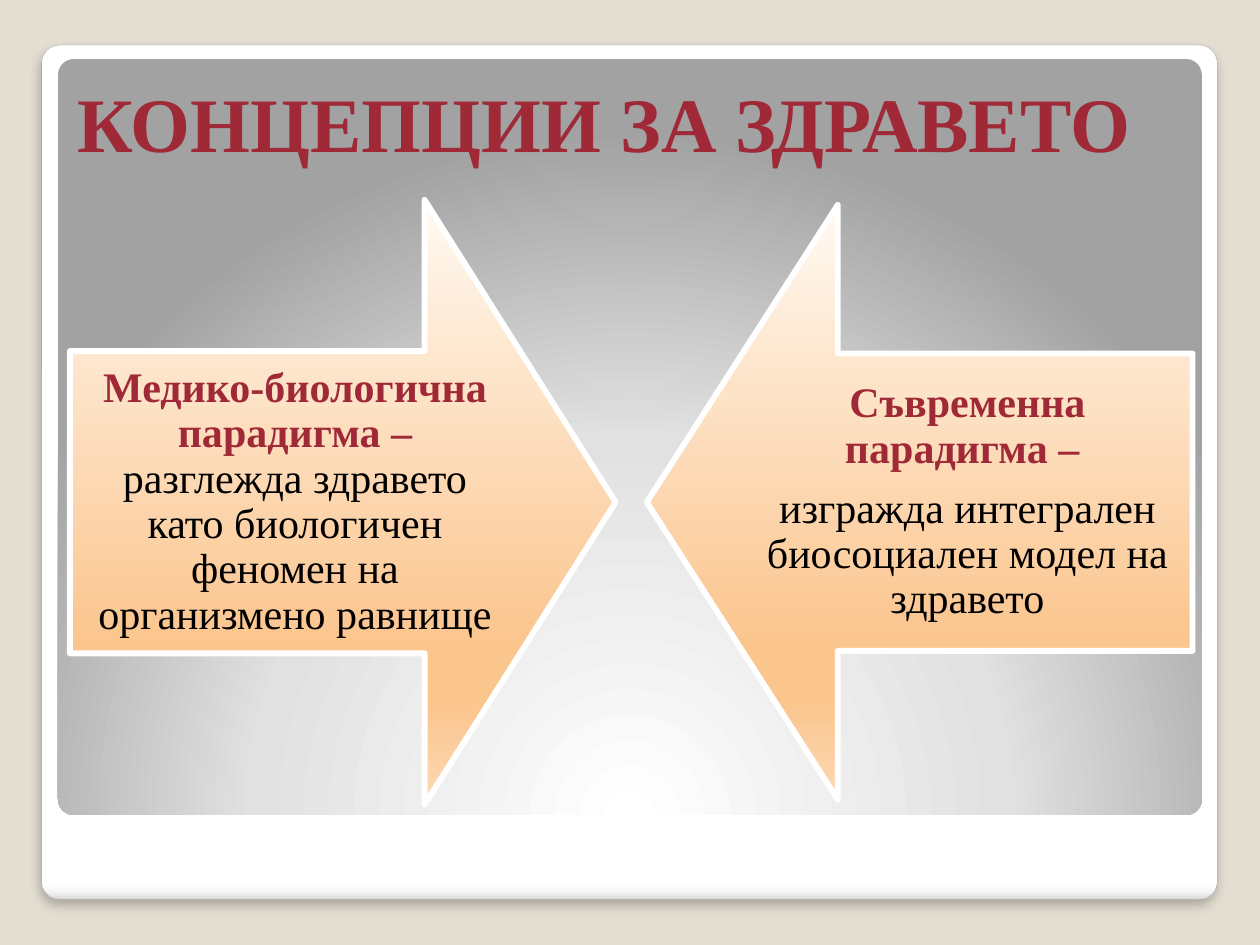
"""Build the slide that sets two concepts of health against each other."""
from lxml import etree
from pptx import Presentation
from pptx.dml.color import RGBColor
from pptx.enum.shapes import MSO_SHAPE as SHAPE
from pptx.enum.text import MSO_ANCHOR as ANCHOR, MSO_AUTO_SIZE as AUTO, PP_ALIGN as ALIGN
from pptx.oxml import parse_xml
from pptx.oxml.ns import nsdecls, qn
from pptx.util import Cm, Pt

COLORS = {"sand": "E3DED1", "white": "FFFFFF", "edge": "A4A4A4", "red": "9F2936", "black": "000000"}
CARD = [(0, "FFFFFF"), (98, "FFFFFF"), (99, "F7F7F7"), (100, "DADADA")]
PANEL = [(0, "FFFFFF"), (55, "E1E1E1"), (100, "A2A2A2")]
PEACH = [(0, "FFF9F2"), (74, "FBC58E"), (83, "FBC58E"), (100, "FCD9B4")]
LINEAR = '<a:lin ang="5400000" scaled="0"/>'
RADIAL = '<a:path path="circle"><a:fillToRect l="50000" t="175000" r="50000" b="-75000"/></a:path>'


def add_shape(kind, box, adjustments, stops, shade=LINEAR, line=None, width=0):
    s = slide.shapes.add_shape(kind, *map(Cm, box))
    for i, value in enumerate(adjustments):
        s.adjustments[i] = value
    gs = "".join(f'<a:gs pos="{pos * 1000}"><a:srgbClr val="{color}"/></a:gs>' for pos, color in stops)
    s._element.spPr.append(parse_xml(
        f'<a:gradFill {nsdecls("a")} rotWithShape="1"><a:gsLst>{gs}</a:gsLst>{shade}</a:gradFill>'))
    if line:
        s.line.color.rgb = RGBColor.from_string(COLORS[line])
        s.line.width = Pt(width)
    else:
        s.line.fill.background()
    s.shadow.inherit = False
    return s


def add_run(p, text, size=24, color="black", bold=False):
    r = p.add_run()
    r.text = text
    r.font.name = "Times New Roman"
    r.font.size = Pt(size)
    r.font.bold = bold
    r.font.color.rgb = RGBColor.from_string(COLORS[color])


prs = Presentation()
prs.slide_width, prs.slide_height = Cm(25.4), Cm(19.05)
slide = prs.slides.add_slide(prs.slide_layouts[5])
slide.background.fill.solid()
slide.background.fill.fore_color.rgb = RGBColor.from_string(COLORS["sand"])

card = add_shape(SHAPE.ROUNDED_RECTANGLE, (0.84, 0.91, 23.7, 17.22), [0.021], CARD, line="edge", width=0.16)
effects = card._element.spPr.find(qn("a:effectLst"))
shadow = etree.SubElement(effects, qn("a:outerShdw"), blurRad=str(Pt(6)), dist=str(Pt(4)),
                          dir="5400000", algn="t", rotWithShape="0")
color = etree.SubElement(shadow, qn("a:srgbClr"), val=COLORS["black"])
etree.SubElement(color, qn("a:alpha"), val="25000")
add_shape(SHAPE.ROUNDED_RECTANGLE, (1.17, 1.19, 23.06, 15.24), [0.021], PANEL, shade=RADIAL)

title = slide.shapes.title
slide.shapes._spTree.append(title._element)
title.left, title.top, title.width, title.height = map(Cm, (1.3, 1.12, 22.83, 2.39))
tf = title.text_frame
tf.auto_size = AUTO.NONE
tf.vertical_anchor = ANCHOR.BOTTOM
tf.paragraphs[0].alignment = ALIGN.LEFT
add_run(tf.paragraphs[0], "КОНЦЕПЦИИ ЗА ЗДРАВЕТО", size=44, color="red", bold=True)

arrows = [
    (SHAPE.RIGHT_ARROW, (1.41, 4.03, 11, 12.19),
     [[("Медико-биологична парадигма – ", True),
       ("разглежда здравето като биологичен феномен на организмено равнище", False)]]),
    (SHAPE.LEFT_ARROW, (13.04, 4.13, 11, 11.99),
     [[("Съвременна парадигма – ", True)],
      [("изгражда интегрален биосоциален модел на здравето", False)]]),
]
for kind, box, paragraphs in arrows:
    s = add_shape(kind, box, [0.5, 0.35], PEACH, line="white", width=3.35)
    tf = s.text_frame
    tf.word_wrap = True
    tf.vertical_anchor = ANCHOR.MIDDLE
    tf.margin_left = tf.margin_right = tf.margin_top = tf.margin_bottom = Cm(0.48)
    for i, runs in enumerate(paragraphs):
        p = tf.add_paragraph() if i else tf.paragraphs[0]
        p.alignment = ALIGN.CENTER
        p.line_spacing = 0.9
        p.space_after = Pt(8.4)
        for text, strong in runs:
            add_run(p, text, color="red" if strong else "black", bold=strong)

prs.save("out.pptx")
